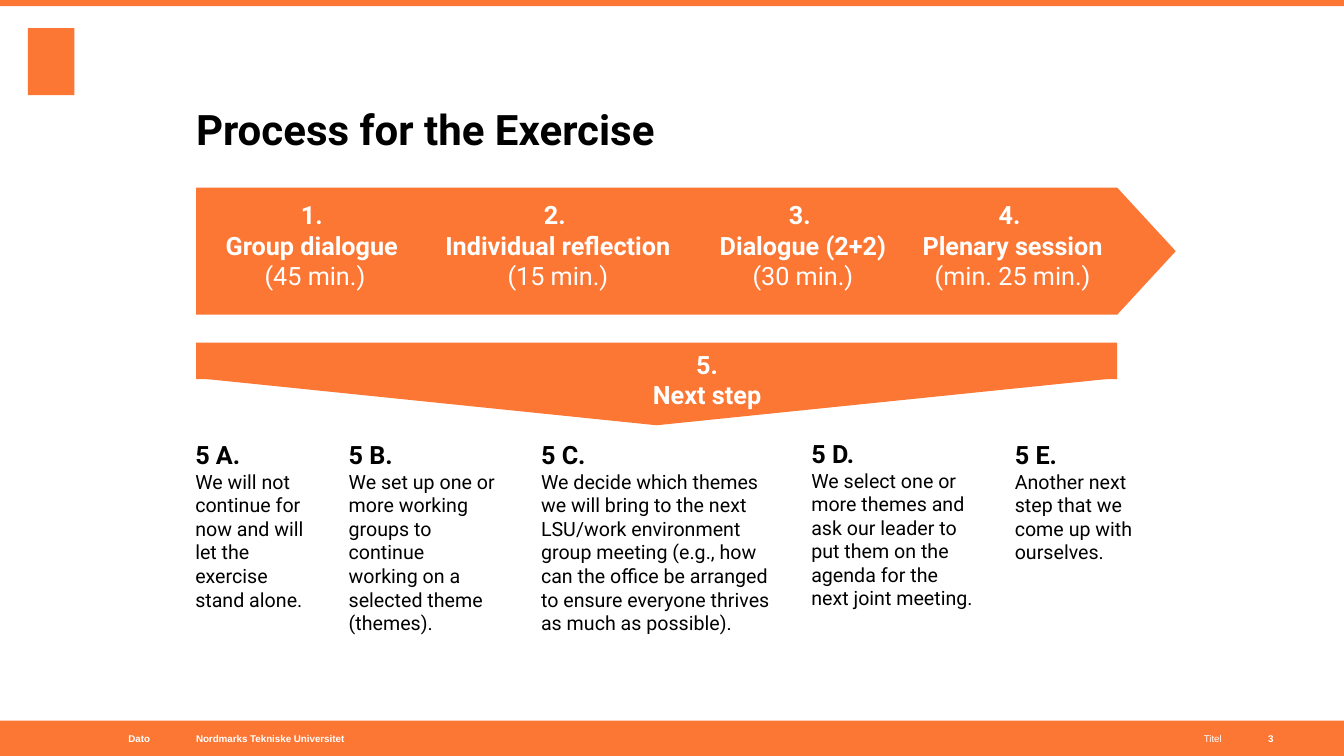
from dataclasses import dataclass

from pptx import Presentation
from pptx import util as u
from pptx.dml import color
from pptx.enum import shapes, text


@dataclass(frozen=True)
class Theme:
    """Colours, fonts and type sizes of the deck."""
    accent: color.RGBColor = color.RGBColor(0xFC, 0x76, 0x34)
    light: color.RGBColor = color.RGBColor(0xFF, 0xFF, 0xFF)
    dark: color.RGBColor = color.RGBColor(0, 0, 0)
    main_font: str = "Roboto"
    footer_font: str = "Arial"
    title: int = 30
    heading: int = 18
    body: int = 14
    footer: int = 7


def apply(target, values):
    """Set each named attribute on the target."""
    for name, value in values.items():
        setattr(target, name, value)


class SlideBuilder:
    """Places styled elements on a 48 by 27 grid."""

    def __init__(self, deck, theme):
        """Add a title-only slide and measure its grid."""
        self.theme = theme
        self.page = deck.slides.add_slide(deck.slide_layouts[5])
        self.column = deck.slide_width / 48
        self.row = deck.slide_height / 27

    def place(self, left, top, width, height):
        """Turn grid cells into slide lengths."""
        return [round(cells * unit) for cells, unit in zip(
            (left, top, width, height), (self.column, self.row) * 2)]

    def block(self, kind, *cells, rotation=0):
        """Draw a plain accent shape."""
        shape = self.page.shapes.add_shape(kind, *self.place(*cells))
        shape.shadow.inherit = False
        shape.fill.solid()
        shape.fill.fore_color.rgb = self.theme.accent
        shape.line.fill.background()
        shape.rotation = rotation
        return shape

    def frame(self, box, anchor, side=0, end=0):
        """Format the text frame of a box and return it."""
        apply(box.text_frame, {
            "word_wrap": True, "auto_size": text.MSO_AUTO_SIZE.NONE,
            "vertical_anchor": anchor,
            "margin_left": u.Inches(side), "margin_right": u.Inches(side),
            "margin_top": u.Inches(end), "margin_bottom": u.Inches(end)})
        return box.text_frame

    def span(self, para, words, size, ink, bold=True, font=None):
        """Append one formatted run."""
        span = para.add_run()
        span.text = words
        apply(span.font, {"name": font or self.theme.main_font,
                          "size": u.Pt(size), "bold": bold})
        span.font.color.rgb = ink

    def title(self, words, *cells):
        """Fill the title placeholder."""
        box = self.page.shapes.title
        apply(box, dict(zip(("left", "top", "width", "height"), self.place(*cells))))
        para = self.frame(box, text.MSO_ANCHOR.BOTTOM).paragraphs[0]
        para.alignment = text.PP_ALIGN.LEFT
        self.span(para, words, self.theme.title, self.theme.dark)

    def label(self, lines, *cells, side=0, end=0):
        """Write centred white lines, the third one regular."""
        box = self.page.shapes.add_textbox(*self.place(*cells))
        frame = self.frame(box, text.MSO_ANCHOR.MIDDLE, side, end)
        for index, words in enumerate(lines):
            para = frame.add_paragraph() if index else frame.paragraphs[0]
            para.alignment = text.PP_ALIGN.CENTER
            self.span(para, words, self.theme.heading, self.theme.light, index < 2)

    def option(self, heading, words, *cells):
        """Write an option heading with its description below."""
        box = self.page.shapes.add_textbox(*self.place(*cells))
        para = self.frame(box, text.MSO_ANCHOR.TOP, 0.1, 0.05).paragraphs[0]
        self.span(para, heading, self.theme.heading, self.theme.dark)
        para.add_line_break()
        self.span(para, words, self.theme.body, self.theme.dark, False)

    def footer(self, words, left, width, align, bold, top, height):
        """Write one footer field."""
        box = self.page.shapes.add_textbox(*self.place(left, top, width, height))
        para = self.frame(box, text.MSO_ANCHOR.MIDDLE).paragraphs[0]
        para.alignment = align
        self.span(para, words, self.theme.footer, self.theme.light, bold,
                  self.theme.footer_font)


def main():
    """Build and save the slide."""
    deck = Presentation()
    apply(deck, {"slide_width": u.Inches(13.33), "slide_height": u.Inches(7.5)})
    slide = SlideBuilder(deck, Theme())
    rect = shapes.MSO_SHAPE.RECTANGLE
    merge = shapes.MSO_SHAPE.FLOWCHART_MERGE
    left, right = text.PP_ALIGN.LEFT, text.PP_ALIGN.RIGHT

    margin, band_width = 7, 32.9
    band_top, band_height, tip = 6.7, 4.54, 2.09
    footer_top, footer_height = 25.74, 1.26

    slide.block(rect, 1, 1, 1.66, 2.4)
    slide.block(rect, 0, footer_top, 48, footer_height)
    slide.block(rect, 0, 0, 48, 0.22)

    slide.block(rect, margin, band_top, band_width, band_height)
    overhang = (band_height - tip) / 2
    slide.block(merge, margin + band_width - overhang, band_top + overhang,
                band_height, tip, rotation=270)
    slide.page.shapes.add_group_shape([
        slide.block(merge, margin, 13.5, band_width, 1.69),
        slide.block(rect, margin, 12.24, band_width, 1.3)])

    slide.title("Process for the Exercise", margin, 1.69, 36.65, 3.82)

    steps = [
        ("Group dialogue ", "(45 min.)", 7.56, 7.38),
        ("Individual reflection", "(15 min.)", 15.19, 9.47),
        ("Dialogue (2+2)", "(30 min.)", 25.13, 7.09),
        ("Plenary session", "(min. 25 min.)", 31.36, 9.61),
    ]
    for number, (name, duration, start, width) in enumerate(steps, 1):
        slide.label([f"{number}. ", name, duration], start, 4.14, width, 9.22, end=0.2)
    slide.label(["5. ", "Next step "], 22, 12.42, 6.73, 2.27, side=0.1, end=0.05)

    options = [
        ("A", "We will not continue for now and will let the exercise stand alone.",
         6.62, 15.52, 4.9),
        ("B", "We set up one or more working groups to continue working on a "
         "selected theme (themes).", 12.1, 15.52, 6.05),
        ("C", "We decide which themes we will bring to the next LSU/work environment "
         "group meeting (e.g., how can the office be arranged to ensure everyone "
         "thrives as much as possible).", 18.97, 15.52, 9.11),
        ("D", "We select one or more themes and ask our leader to put them on the "
         "agenda for the next joint meeting.", 28.62, 15.48, 6.73),
        ("E", "Another next step that we come up with ourselves.", 35.89, 15.52, 4.97),
    ]
    for letter, words, start, top, width in options:
        slide.option(f"5 {letter}. ", words, start, top, width, 7.85)

    fields = [
        ("Dato", 1, 4.36, right, True),
        ("Nordmarks Tekniske Universitet", margin, 13.39, left, True),
        ("Titel", 22, 21.64, right, False),
        ("3", 45.29, 1.69, left, True),
    ]
    for field in fields:
        slide.footer(*field, footer_top, footer_height)

    deck.save("out.pptx")


if __name__ == "__main__":
    main()
